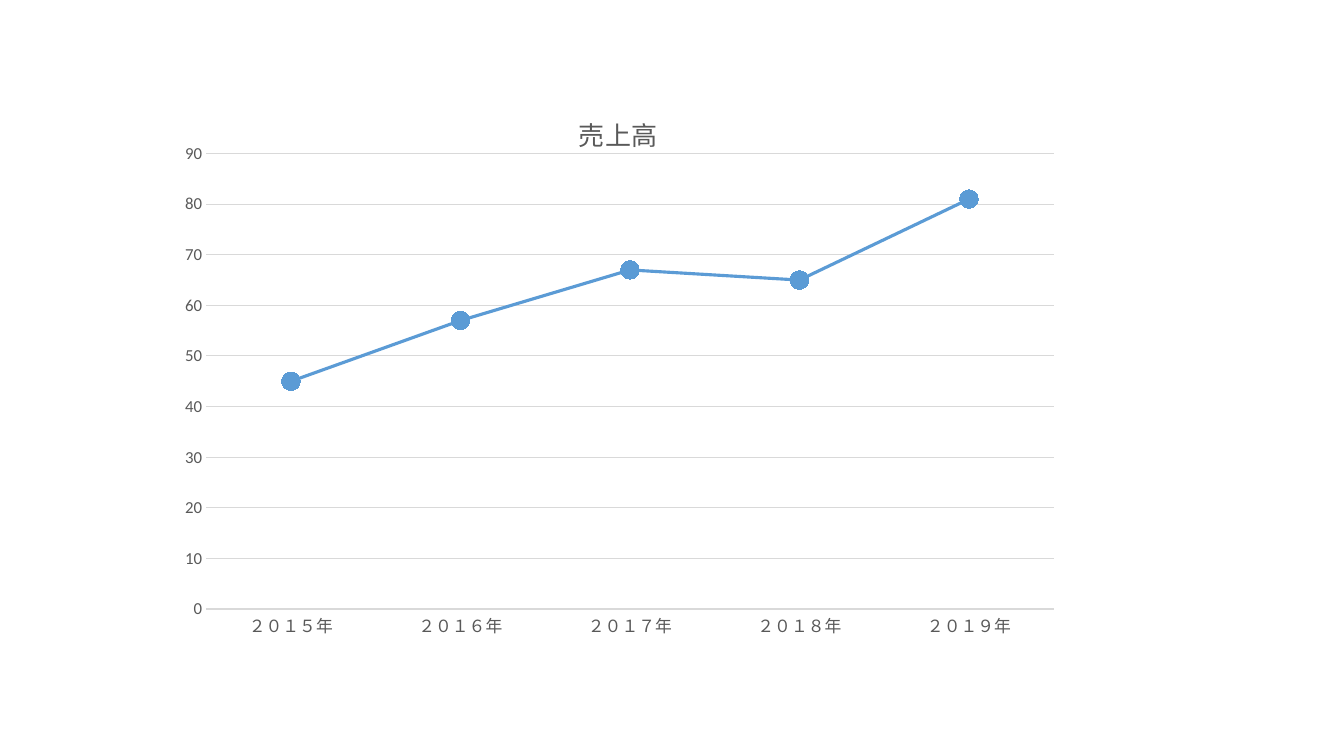
from lxml import etree
from pptx import Presentation
from pptx import util as u
from pptx.chart.data import CategoryChartData
from pptx.dml.color import RGBColor
from pptx.enum import chart as charts
from pptx.oxml.ns import qn

COLORS = {"line": "5B9BD5", "grid": "D9D9D9", "text": "595959"}
FONT = "Calibri"
SALES = {"２０１５年": 45, "２０１６年": 57, "２０１７年": 67, "２０１８年": 65, "２０１９年": 81}


def color(name):
    return RGBColor.from_string(COLORS[name])


class SlideBuilder:
    def __init__(self, slide):
        self.slide = slide

    def style_font(self, font, size):
        font.name = FONT
        font.size = u.Pt(size)
        font.bold = False
        font.color.rgb = color("text")

    def style_line(self, line, name, width):
        line.color.rgb = color(name)
        line.width = u.Pt(width)

    def style_axis(self, axis):
        axis.major_tick_mark = axis.minor_tick_mark = charts.XL_TICK_MARK.NONE
        self.style_font(axis.tick_labels.font, 12)

    def place_plot(self, chart, **fractions):
        """Fix the inner plot area as fractions of the chart's size."""
        plot_area = chart.plots[0]._element.getparent()
        for old_layout in plot_area.findall(qn("c:layout")):
            plot_area.remove(old_layout)
        layout = etree.Element(qn("c:layout"))
        manual = etree.SubElement(layout, qn("c:manualLayout"))
        settings = {"layoutTarget": "inner", "xMode": "edge", "yMode": "edge", **fractions}
        for tag, value in settings.items():
            etree.SubElement(manual, qn(f"c:{tag}")).set("val", str(value))
        plot_area.insert(0, layout)

    def line_chart(self, title, values, left, top, width, height):
        data = CategoryChartData()
        data.categories = list(values)
        data.add_series(title, list(values.values()))
        chart = self.slide.shapes.add_chart(
            charts.XL_CHART_TYPE.LINE_MARKERS,
            u.Pt(left), u.Pt(top), u.Pt(width), u.Pt(height), data).chart
        chart.has_legend = False
        chart.font.name = FONT
        chart.font.size = u.Pt(10)

        chart.has_title = True
        chart.chart_title.include_in_layout = False
        chart.chart_title.text_frame.text = title
        run = chart.chart_title.text_frame.paragraphs[0].runs[0]
        self.style_font(run.font, 18.6)

        self.style_axis(chart.category_axis)
        self.style_line(chart.category_axis.format.line, "grid", 0.75)
        value_axis = chart.value_axis
        self.style_axis(value_axis)
        value_axis.format.line.fill.background()
        value_axis.minimum_scale, value_axis.maximum_scale = 0, 90
        value_axis.major_unit = 10
        value_axis.has_major_gridlines = True
        self.style_line(value_axis.major_gridlines.format.line, "grid", 0.75)

        chart.plots[0].vary_by_categories = False
        series = chart.plots[0].series[0]
        series.smooth = False
        self.style_line(series.format.line, "line", 2.25)
        marker = series.marker
        marker.style = charts.XL_MARKER_STYLE.CIRCLE
        marker.size = 13
        marker.format.fill.solid()
        marker.format.fill.fore_color.rgb = color("line")
        self.style_line(marker.format.line, "line", 0.75)
        return chart


def main():
    presentation = Presentation()
    presentation.slide_width = u.Pt(960)
    presentation.slide_height = u.Pt(540)
    slide = presentation.slides.add_slide(presentation.slide_layouts[6])
    builder = SlideBuilder(slide)
    chart = builder.line_chart("売上高", SALES, 121.7, 64, 640, 427)
    builder.place_plot(chart, x=0.04, y=0.107, w=0.946, h=0.762)
    presentation.save("out.pptx")


if __name__ == "__main__":
    main()
